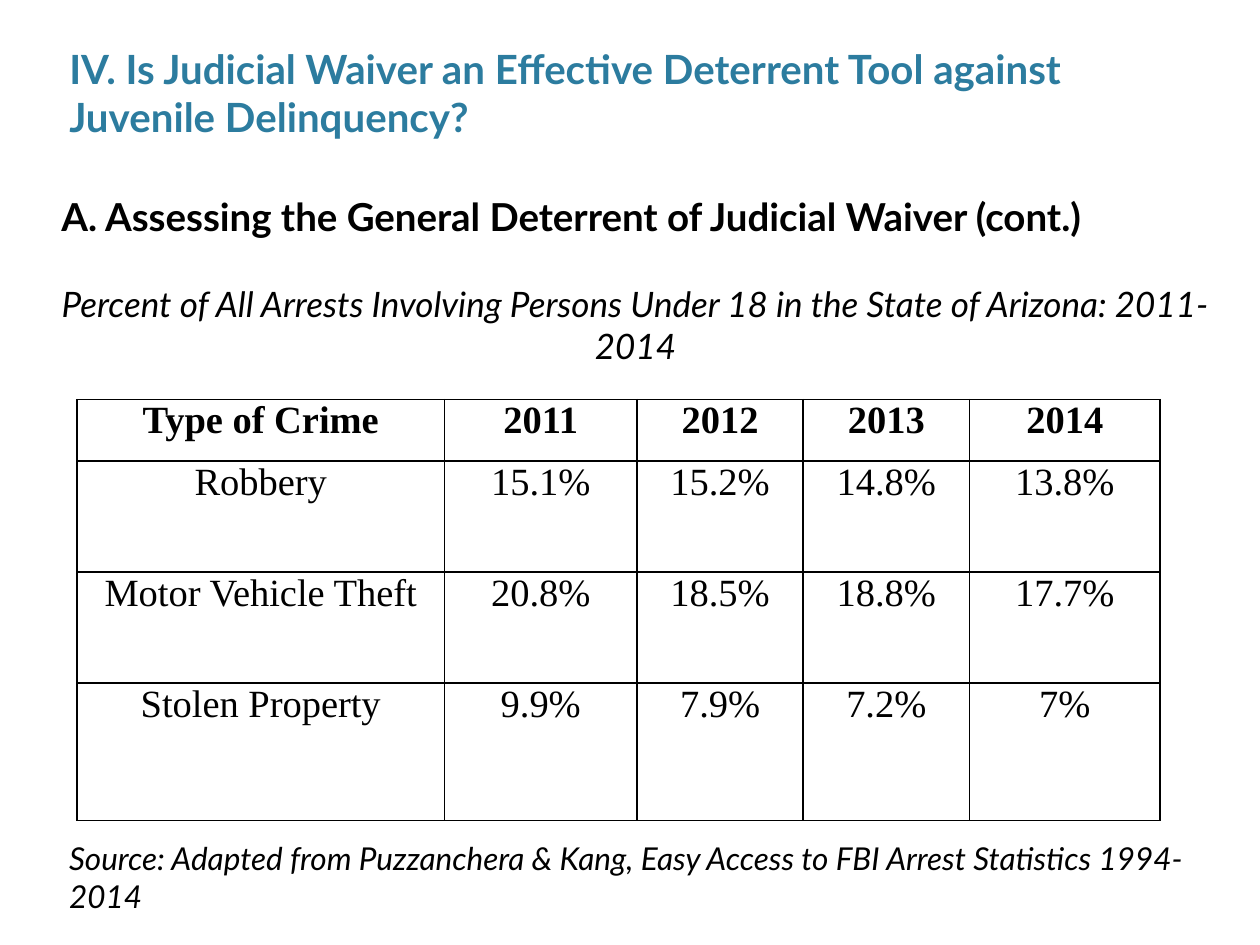
from lxml import etree
from pptx import Presentation
from pptx.dml.color import RGBColor
from pptx.enum.text import MSO_ANCHOR, MSO_AUTO_SIZE, PP_ALIGN
from pptx.oxml.ns import qn
from pptx.util import Pt

LEFT, CENTER = PP_ALIGN.LEFT, PP_ALIGN.CENTER
TOP, BOTTOM = MSO_ANCHOR.TOP, MSO_ANCHOR.BOTTOM
NO_AUTOFIT = MSO_AUTO_SIZE.NONE

BLACK = RGBColor(0x00, 0x00, 0x00)
TEAL = RGBColor(0x2C, 0x7C, 0x9F)
BODY_FONT = "Lato"
TABLE_FONT = "Times New Roman"

TITLE_ONLY_LAYOUT = 5
COLUMN_WIDTHS = (210, 110, 95, 95, 109)
ROW_HEIGHTS = (35, 63.5, 63.5, 78.5)
ARREST_SHARES = (
    ("Type of Crime", "2011", "2012", "2013", "2014"),
    ("Robbery", "15.1%", "15.2%", "14.8%", "13.8%"),
    ("Motor Vehicle Theft", "20.8%", "18.5%", "18.8%", "17.7%"),
    ("Stolen Property", "9.9%", "7.9%", "7.2%", "7%"),
)


def write_text(text_frame, text, size, font=BODY_FONT, color=BLACK,
               bold=False, italic=False, align=LEFT):
    paragraph = text_frame.paragraphs[0]
    paragraph.alignment = align
    run = paragraph.add_run()
    run.text = text
    run.font.name = font
    run.font.size = Pt(size)
    run.font.color.rgb = color
    run.font.bold = bold
    run.font.italic = italic


def add_title(slide, text):
    title = slide.shapes.title
    title.left, title.top, title.width, title.height = (
        Pt(32.4), Pt(12.2), Pt(652.3), Pt(72))
    text_frame = title.text_frame
    text_frame.auto_size = NO_AUTOFIT
    text_frame.vertical_anchor = BOTTOM
    write_text(text_frame, text, 23, color=TEAL, bold=True)


def add_text_box(slide, text, left, top, width, height, **text_format):
    box = slide.shapes.add_textbox(Pt(left), Pt(top), Pt(width), Pt(height))
    box.text_frame.word_wrap = True
    write_text(box.text_frame, text, **text_format)


def add_borders(cell, color=BLACK, width=1):
    """Draw all four cell borders; they must precede the fill in the XML."""
    properties = cell._tc.get_or_add_tcPr()
    for position, side in enumerate(("a:lnL", "a:lnR", "a:lnT", "a:lnB")):
        line = etree.Element(qn(side), w=str(Pt(width)))
        fill = etree.SubElement(line, qn("a:solidFill"))
        etree.SubElement(fill, qn("a:srgbClr"), val=str(color))
        properties.insert(position, line)


def format_cell(cell, text, bold):
    cell.margin_left = cell.margin_right = Pt(5)
    cell.margin_top = cell.margin_bottom = Pt(0)
    cell.vertical_anchor = TOP
    cell.fill.background()
    add_borders(cell)
    write_text(cell.text_frame, text, 22, font=TABLE_FONT, bold=bold, align=CENTER)


def add_arrest_table(slide, left, top):
    table = slide.shapes.add_table(
        len(ROW_HEIGHTS), len(COLUMN_WIDTHS), Pt(left), Pt(top),
        Pt(sum(COLUMN_WIDTHS)), Pt(sum(ROW_HEIGHTS))).table
    table.first_row = table.horz_banding = False
    for column, width in zip(table.columns, COLUMN_WIDTHS):
        column.width = Pt(width)
    for index, (row, height) in enumerate(zip(table.rows, ROW_HEIGHTS)):
        row.height = Pt(height)
        for cell, text in zip(row.cells, ARREST_SHARES[index]):
            format_cell(cell, text, bold=index == 0)


def main():
    presentation = Presentation()
    presentation.slide_width, presentation.slide_height = Pt(720), Pt(540)
    slide = presentation.slides.add_slide(
        presentation.slide_layouts[TITLE_ONLY_LAYOUT])

    add_title(slide, "IV. Is Judicial Waiver an Effective Deterrent Tool "
                     "against Juvenile Delinquency?")
    add_text_box(slide, "Percent of All Arrests Involving Persons Under 18 "
                        "in the State of Arizona: 2011-2014",
                 28, 157.7, 670.3, 55.4, size=20, italic=True, align=CENTER)
    add_text_box(slide, "Source: Adapted from Puzzanchera & Kang, "
                        "Easy Access to FBI Arrest Statistics 1994-2014",
                 32.4, 476, 652.3, 51, size=18, italic=True)
    add_arrest_table(slide, 44, 228.4)
    add_text_box(slide, "A. Assessing the General Deterrent of Judicial Waiver (cont.)",
                 28, 106.6, 672.5, 33.8, size=22, bold=True)

    presentation.save("out.pptx")


if __name__ == "__main__":
    main()
